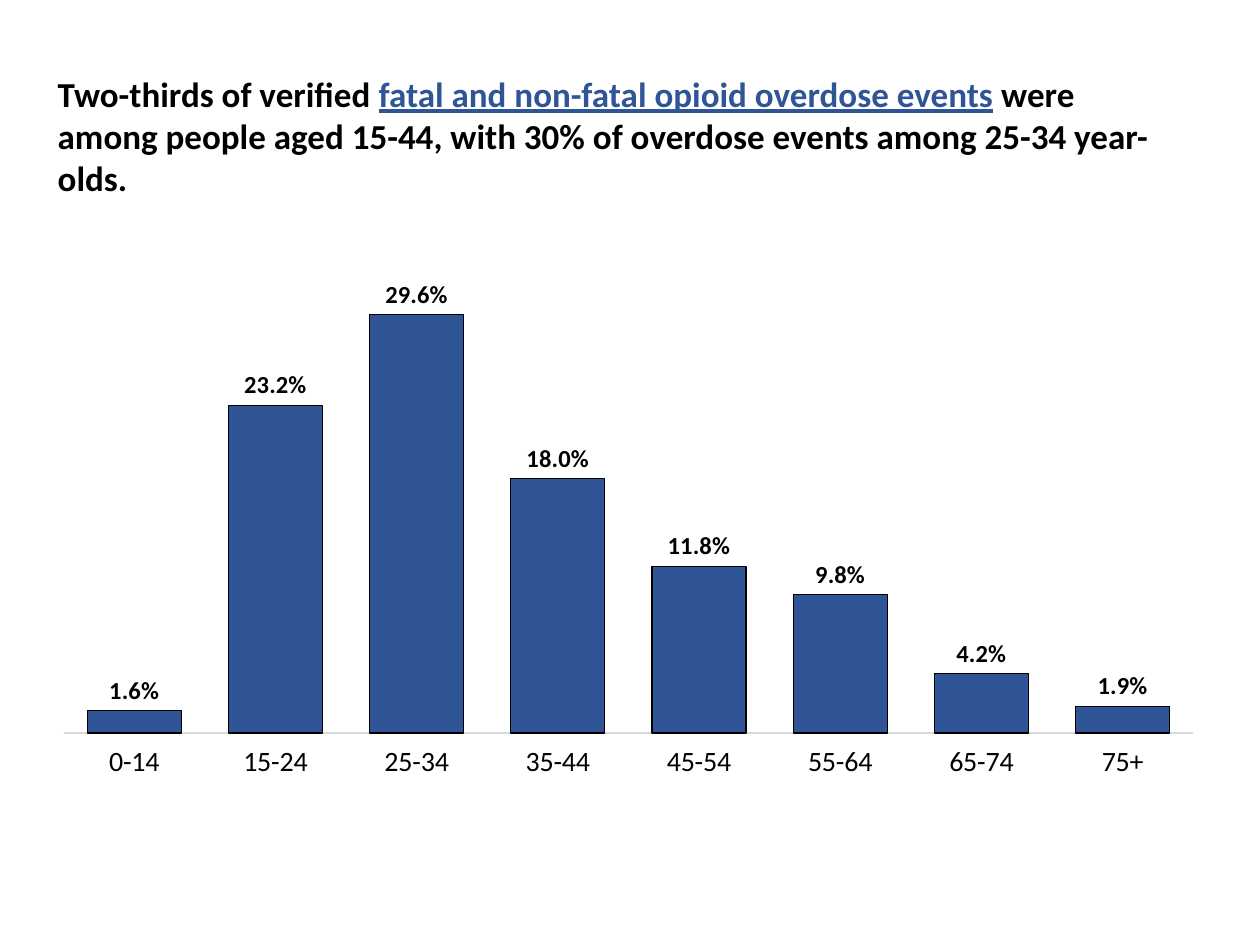
from lxml.etree import SubElement
from pptx import Presentation
from pptx.chart.data import CategoryChartData
from pptx.dml.color import RGBColor
from pptx.enum.chart import XL_CHART_TYPE, XL_LABEL_POSITION, XL_TICK_LABEL_POSITION, XL_TICK_MARK
from pptx.enum.text import MSO_AUTO_SIZE
from pptx.oxml.ns import qn
from pptx.util import Inches, Pt

BLACK, BLUE, GREY = "000000", "2F5597", "D9D9D9"
AGES = ["0-14", "15-24", "25-34", "35-44", "45-54", "55-64", "65-74", "75+"]
SHARES = [0.016, 0.232, 0.296, 0.18, 0.118, 0.098, 0.042, 0.019]


def rgb(value):
    return RGBColor.from_string(value)


class Deck:
    """Holds the style and the current slide; lengths are shares of the slide."""

    def __init__(self, width=10, height=7.5, font="Calibri"):
        self.prs = Presentation()
        self.prs.slide_width, self.prs.slide_height = Inches(width), Inches(height)
        self.name = font
        self.s = self.prs.slides.add_slide(self.prs.slide_layouts[6])

    def box(self, x, y, w, h):
        width, height = self.prs.slide_width, self.prs.slide_height
        return int(x * width), int(y * height), int(w * width), int(h * height)

    def font(self, font, size, color=BLACK, bold=False, underline=None):
        font.name, font.size, font.bold = self.name, Pt(size), bold
        font.color.rgb = rgb(color)
        if underline is not None:
            font.underline = underline

    def line(self, line, color):
        line.color.rgb, line.width = rgb(color), Pt(0.75)

    def heading(self, place, parts, size=20):
        tf = self.s.shapes.add_textbox(*self.box(*place)).text_frame
        tf.word_wrap, tf.auto_size = True, MSO_AUTO_SIZE.SHAPE_TO_FIT_TEXT
        p = tf.paragraphs[0]
        for text, color, underline in parts:
            r = p.add_run()
            r.text = text
            self.font(r.font, size, color, True, underline)

    def columns(self, place, cats, vals, plot):
        data = CategoryChartData(number_format="0.0%")
        data.categories = cats
        data.add_series("Series 1", vals)
        chart = self.s.shapes.add_chart(
            XL_CHART_TYPE.COLUMN_CLUSTERED, *self.box(*place), data).chart
        chart.has_legend = chart.has_title = False
        self.font(chart.font, 10)
        self.axes(chart)
        bars = chart.plots[0]
        bars.gap_width, bars.vary_by_categories = 50, False
        fmt = bars.series[0].format
        fmt.fill.solid()
        fmt.fill.fore_color.rgb = rgb(BLUE)
        self.line(fmt.line, BLACK)
        labels = bars.series[0].data_labels
        labels.show_value, labels.position = True, XL_LABEL_POSITION.OUTSIDE_END
        labels.number_format, labels.number_format_is_linked = "0.0%", False
        self.font(labels.font, 14, bold=True)
        self.inner_plot(chart, plot)

    def axes(self, chart):
        cat, val = chart.category_axis, chart.value_axis
        cat.major_tick_mark = cat.minor_tick_mark = XL_TICK_MARK.NONE
        cat.tick_label_position = XL_TICK_LABEL_POSITION.LOW
        self.font(cat.tick_labels.font, 16)
        self.line(cat.format.line, GREY)
        val.minimum_scale, val.maximum_scale = 0, 0.35
        val.has_major_gridlines = val.visible = False

    def inner_plot(self, chart, plot):
        area = chart.plots[0]._element.getparent()
        for old in area.findall(qn("c:layout")):
            area.remove(old)
        layout = SubElement(area, qn("c:layout"))
        area.insert(0, layout)
        manual = SubElement(layout, qn("c:manualLayout"))
        settings = [("layoutTarget", "inner"), ("xMode", "edge"), ("yMode", "edge")]
        for tag, value in settings + list(zip("xywh", plot)):
            SubElement(manual, qn(f"c:{tag}")).set("val", str(value))


def main():
    deck = Deck()
    deck.columns((0.05, 0.25, 0.908, 0.597), AGES, SHARES, (0, 0.004, 0.988, 0.877))
    deck.heading((0.036, 0.07, 0.903, 0.148), [
        ("Two-thirds of verified ", BLACK, None),
        ("fatal and non-fatal opioid overdose events", BLUE, True),
        (" were among people aged 15-44, with 30% of overdose events "
         "among 25-34 year-olds.", BLACK, None),
    ])
    deck.prs.save("out.pptx")


if __name__ == "__main__":
    main()
